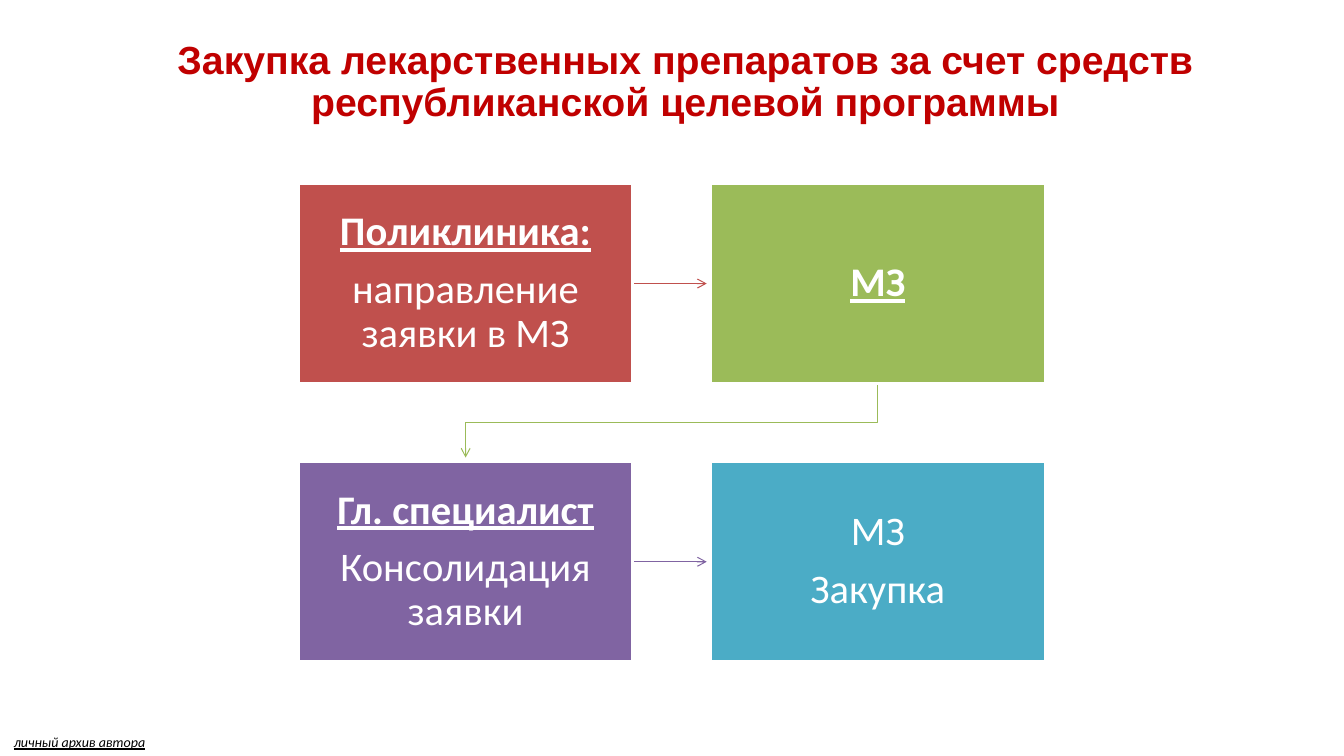
import pptx
import pptx.util
import pptx.dml.color
import pptx.enum.shapes
import pptx.enum.text
import pptx.oxml.ns
from lxml import etree
from pptx.util import Cm

COLORS = {
    "title": "C00000",
    "red": "C0504D",
    "green": "9BBB59",
    "purple": "8064A2",
    "blue": "4BACC6",
    "white": "FFFFFF",
    "black": "000000",
}
LEFT, TOP = 7.52, 4.62
BOX_W, BOX_H = 8.43, 5.05
STEP_X, STEP_Y = 10.39, 7.01
ARROW_GAP = 0.1
HEADING = {"bold": True, "underline": True}


def rgb(name):
    return pptx.dml.color.RGBColor.from_string(COLORS[name])


def add_text(p, text, size=29, font="Calibri", color="white", align="CENTER",
             spacing=0.9, after=0, **style):
    p.text = text
    p.alignment = getattr(pptx.enum.text.PP_ALIGN, align)
    p.line_spacing = spacing
    p.space_after = pptx.util.Pt(after)
    for r in p.runs:
        r.font.size = pptx.util.Pt(size)
        r.font.name = font
        r.font.color.rgb = rgb(color)
        for key, value in style.items():
            setattr(r.font, key, value)


def add_label(s, x, y, w, h, text, **style):
    tf = s.shapes.add_textbox(Cm(x), Cm(y), Cm(w), Cm(h)).text_frame
    tf.word_wrap = True
    add_text(tf.paragraphs[0], text, **style)
    return tf


def add_box(s, col, row, color, lines):
    sp = s.shapes.add_shape(
        pptx.enum.shapes.MSO_SHAPE.RECTANGLE,
        Cm(LEFT + col * STEP_X), Cm(TOP + row * STEP_Y), Cm(BOX_W), Cm(BOX_H))
    sp.shadow.inherit = False
    sp.fill.solid()
    sp.fill.fore_color.rgb = rgb(color)
    sp.line.color.rgb = rgb("white")
    sp.line.width = pptx.util.Pt(2)
    tf = sp.text_frame
    tf.word_wrap = True
    tf.vertical_anchor = pptx.enum.text.MSO_ANCHOR.MIDDLE
    for side in ("left", "top", "right", "bottom"):
        setattr(tf, f"margin_{side}", Cm(0.58))
    for i, (text, style) in enumerate(lines):
        p = tf.add_paragraph() if i else tf.paragraphs[0]
        add_text(p, text, after=10, **style)


def style_arrow(sp, color):
    sp.line.color.rgb = rgb(color)
    sp.line.width = pptx.util.Pt(0.75)
    qn = pptx.oxml.ns.qn
    etree.SubElement(sp.line._get_or_add_ln(), qn("a:tailEnd"), type="arrow")
    etree.SubElement(sp._element.spPr, qn("a:effectLst"))


def add_row_arrow(s, row, color):
    x = LEFT + BOX_W
    y = Cm(TOP + row * STEP_Y + BOX_H / 2)
    sp = s.shapes.add_connector(
        pptx.enum.shapes.MSO_CONNECTOR.STRAIGHT,
        Cm(x), y, Cm(LEFT + STEP_X - ARROW_GAP), y)
    style_arrow(sp, color)


def add_return_arrow(s, color):
    x_end = LEFT + BOX_W / 2
    x_start = x_end + STEP_X
    y_start = TOP + BOX_H
    y_end = TOP + STEP_Y - ARROW_GAP
    y_mid = (TOP + BOX_H + TOP + STEP_Y) / 2
    path_points = [(x_start, y_mid), (x_end, y_mid), (x_end, y_end)]
    builder = s.shapes.build_freeform(Cm(x_start), Cm(y_start))
    builder.add_line_segments(
        [(Cm(x), Cm(y)) for x, y in path_points], close=False)
    sp = builder.convert_to_shape()
    sp.fill.background()
    style_arrow(sp, color)


def main():
    prs = pptx.Presentation()
    prs.slide_width, prs.slide_height = Cm(33.87), Cm(19.05)
    s = prs.slides.add_slide(prs.slide_layouts[6])

    tf = add_label(
        s, 0.66, 0.81, 33.22, 2.57,
        "Закупка лекарственных препаратов за счет средств\v"
        "республиканской целевой программы",
        size=28, font="Arial", color="title", bold=True)
    tf.vertical_anchor = pptx.enum.text.MSO_ANCHOR.MIDDLE

    add_row_arrow(s, 0, "red")
    add_return_arrow(s, "green")
    add_row_arrow(s, 1, "purple")

    add_box(s, 0, 0, "red", [("Поликлиника:", HEADING),
                             ("направление заявки в МЗ", {})])
    add_box(s, 1, 0, "green", [("МЗ", HEADING)])
    add_box(s, 0, 1, "purple", [("Гл. специалист", HEADING),
                                ("Консолидация заявки", {})])
    add_box(s, 1, 1, "blue", [("МЗ", {}), ("Закупка", {})])

    add_label(s, 0.1, 18.36, 7.77, 0.69, "личный архив автора", size=10,
              color="black", align="LEFT", spacing=1.0,
              italic=True, underline=True)
    prs.save("out.pptx")


if __name__ == "__main__":
    main()
